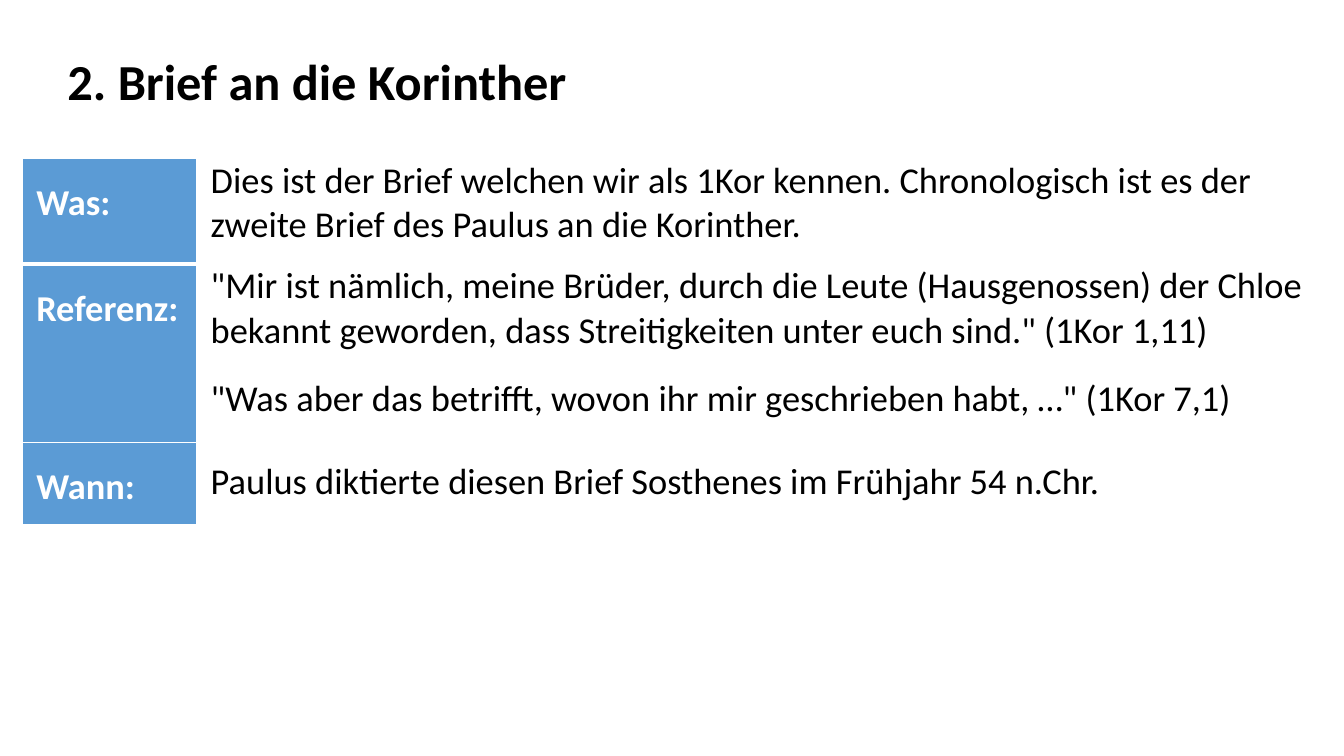
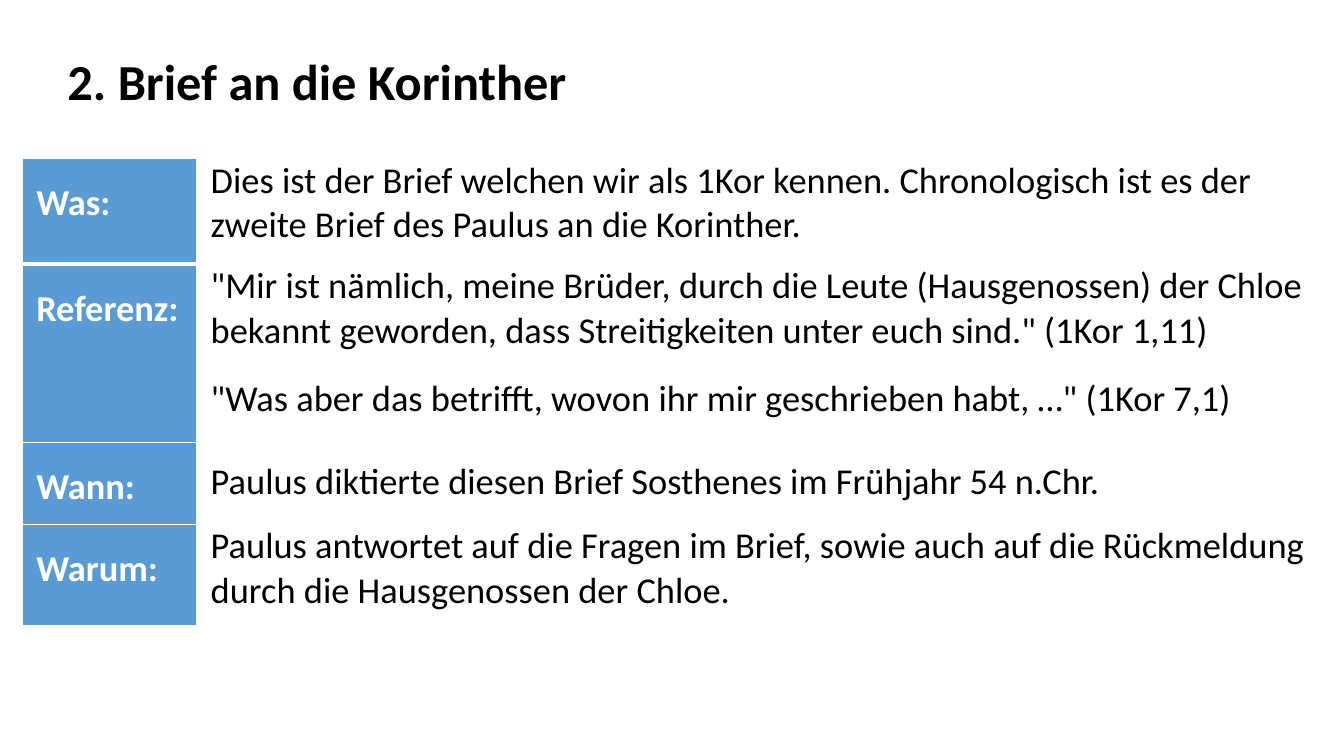
from dataclasses import dataclass

from lxml.etree import SubElement
from pptx import Presentation
from pptx.dml.color import RGBColor as RGB
from pptx.enum.text import MSO_AUTO_SIZE as Auto
from pptx.oxml.ns import qn
from pptx.util import Inches as In, Pt


@dataclass(frozen=True)
class Theme:
    font: str = "Calibri"
    head: int = 36
    body: int = 26
    blue: str = "5B9BD5"
    white: str = "FFFFFF"
    black: str = "000000"
    thin: int = 1
    thick: int = 3


T = Theme()
WIDE, HIGH = 13.33, 7.5
LEFT, TOP = 0.22, 1.57
COLS = (1.73, 11.17)
INSET = 0.14
GAP = 17

TITLE = "2. Brief an die Korinther"
# Label, paragraphs, row height, space above the text
ROWS = [
    ("Was:", ["Dies ist der Brief welchen wir als 1Kor kennen. Chronologisch "
              "ist es der zweite Brief des Paulus an die Korinther."], 1.05, 0),
    ("Referenz:", ['"Mir ist nämlich, meine Brüder, durch die Leute '
                   '(Hausgenossen) der Chloe bekannt geworden, dass '
                   'Streitigkeiten unter euch sind." (1Kor 1,11)',
                   '"Was aber das betrifft, wovon ihr mir geschrieben habt, '
                   '…" (1Kor 7,1)'], 1.77, 0),
    ("Wann:", ["Paulus diktierte diesen Brief Sosthenes im Frühjahr "
               "54 n.Chr."], 0.81, 0.17),
    ("Warum:", ["Paulus antwortet auf die Fragen im Brief, sowie auch auf die "
                "Rückmeldung durch die Hausgenossen der Chloe."], 1.01, 0),
]
SHOWN = (3, 4)  # rows on each slide


def style(para, size, color, bold):
    font = para.font
    font.name, font.size, font.bold = T.font, Pt(size), bold
    font.color.rgb = RGB.from_string(color)


def edge(cell, widths):
    """Draw white borders; widths are left, right, top, bottom in points."""
    props = cell._tc.get_or_add_tcPr()
    for side, width in zip("LRTB", widths):
        line = SubElement(props, qn(f"a:ln{side}"), w=str(Pt(width)))
        fill = SubElement(line, qn("a:solidFill"))
        SubElement(fill, qn("a:srgbClr"), val=T.white)


def write(cell, texts, fill, color, bold=False, lines=1.0, above=0):
    cell.margin_left = cell.margin_right = In(INSET)
    cell.margin_top, cell.margin_bottom = In(above), 0
    cell.fill.solid()
    cell.fill.fore_color.rgb = RGB.from_string(fill)
    frame = cell.text_frame
    for i, text in enumerate(texts):
        para = frame.add_paragraph() if i else frame.paragraphs[0]
        para.text = text
        para.line_spacing = lines
        if i:
            para.space_before = Pt(GAP)
        style(para, T.body, color, bold)


def add_title(slide):
    frame = slide.shapes.add_textbox(
        In(0.57), In(0.45), In(5.21), In(0.71)).text_frame
    frame.word_wrap = False
    frame.auto_size = Auto.SHAPE_TO_FIT_TEXT
    para = frame.paragraphs[0]
    para.text = TITLE
    style(para, T.head, T.black, True)


def add_facts(slide, rows):
    table = slide.shapes.add_table(
        len(rows), len(COLS), In(LEFT), In(TOP), In(sum(COLS)),
        In(sum(row[2] for row in rows))).table
    table.first_row = table.horz_banding = False
    for col, width in zip(table.columns, COLS):
        col.width = In(width)
    for i, (label, texts, height, above) in enumerate(rows):
        table.rows[i].height = In(height)
        name, fact = table.cell(i, 0), table.cell(i, 1)
        over = T.thick if i == 1 else T.thin
        under = T.thick if i == 0 else T.thin
        for cell in (name, fact):
            edge(cell, (T.thin, T.thin, over, under))
        write(name, [label], T.blue, T.white, bold=True, lines=1.5)
        write(fact, texts, T.white, T.black, above=above)


def main():
    deck = Presentation()
    deck.slide_width, deck.slide_height = In(WIDE), In(HIGH)
    for count in SHOWN:
        slide = deck.slides.add_slide(deck.slide_layouts[6])
        add_title(slide)
        add_facts(slide, ROWS[:count])
    deck.save("out.pptx")


if __name__ == "__main__":
    main()
